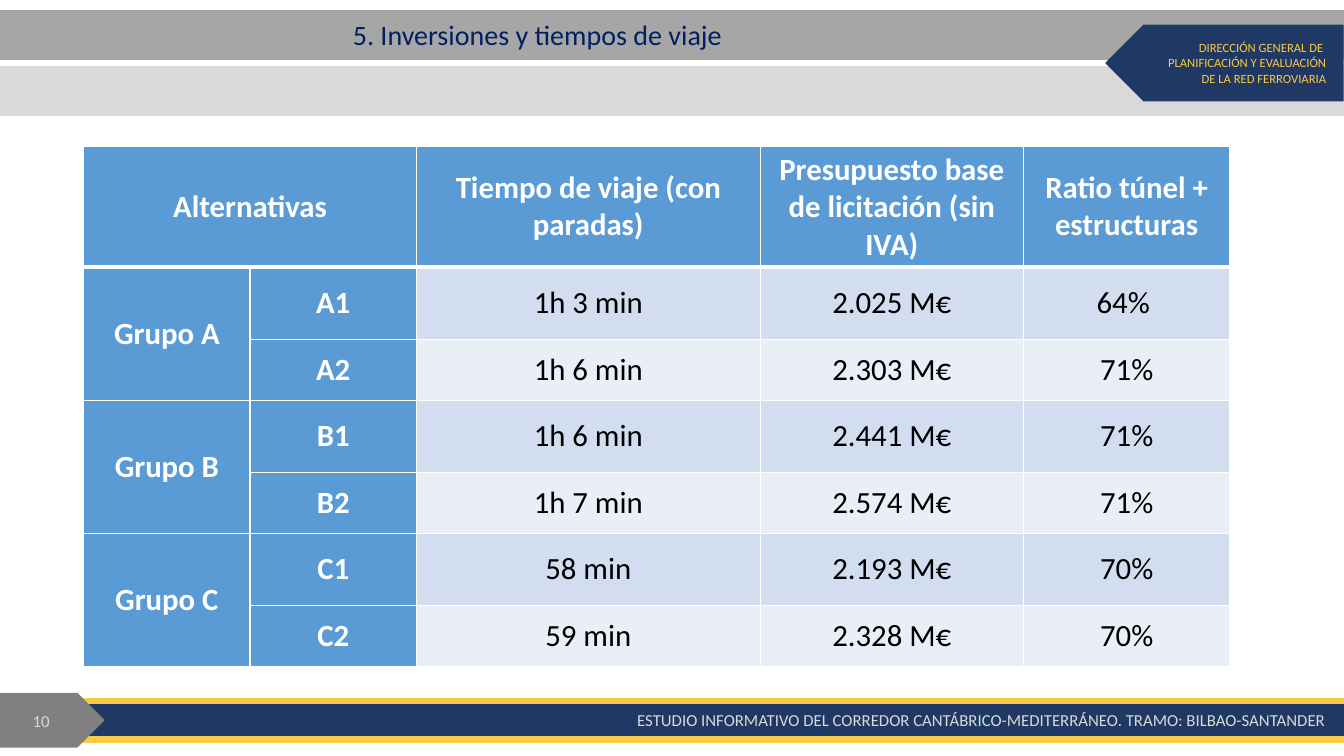
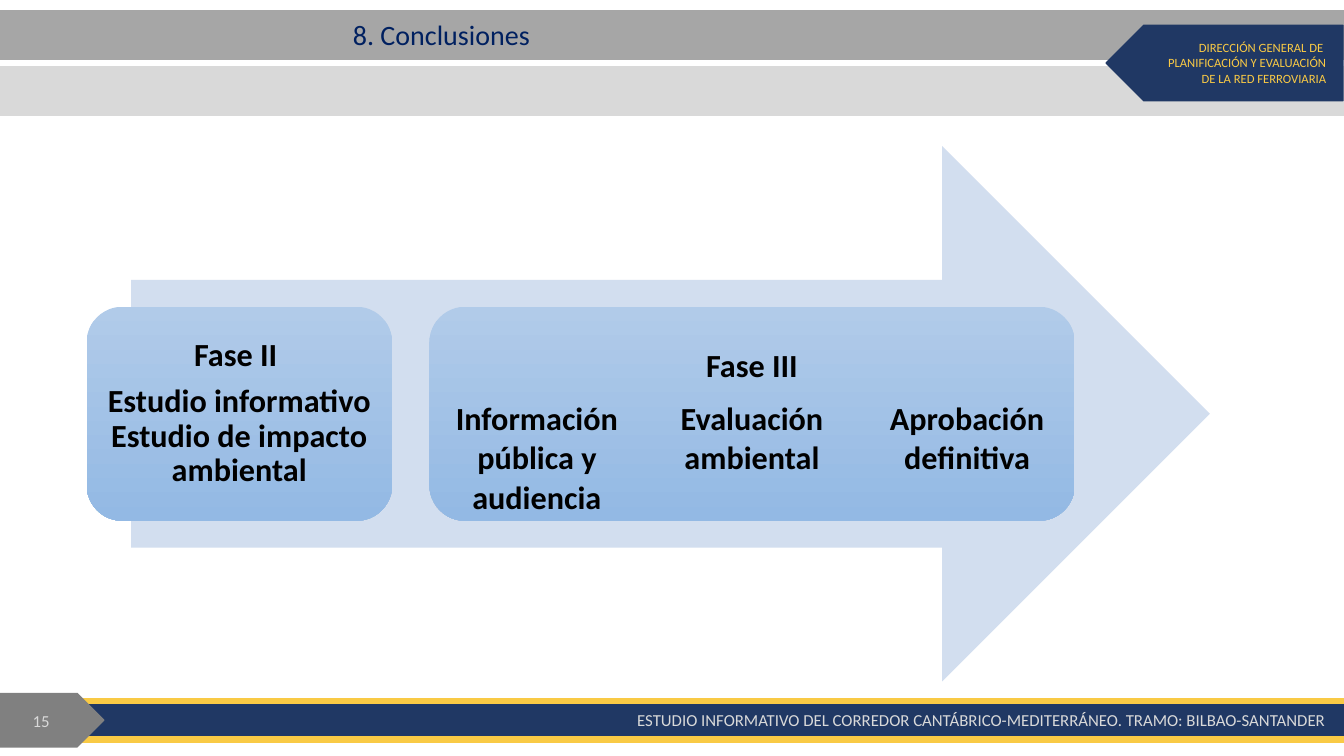
from lxml.etree import SubElement
from pptx import Presentation
from pptx.dml.color import RGBColor
from pptx.enum.shapes import MSO_SHAPE
from pptx.enum.text import MSO_ANCHOR, PP_ALIGN
from pptx.oxml.ns import qn
from pptx.util import Inches, Pt

WIDTH, HEIGHT = 13.33, 7.5
FONT = "Calibri"
NAVY, GOLD, GREY, PALE_GREY = "203864", "F9CA45", "808080", "D9D9D9"
BLUE, ICE, FROST = "5B9BD5", "D2DEEF", "EAEFF7"
TITLE_BLUE, BLACK, WHITE = "002060", "000000", "FFFFFF"
PLAIN_TABLE = "{2D5ABB26-0587-4C30-8999-92F81FD0307C}"
BODY = (0.83, 1.45, 11.37, 5.31)

OFFICE = ["DIRECCIÓN GENERAL DE ", "PLANIFICACIÓN Y EVALUACIÓN DE LA RED FERROVIARIA"]
FOOTER = "ESTUDIO INFORMATIVO DEL CORREDOR CANTÁBRICO-MEDITERRÁNEO. TRAMO: BILBAO-SANTANDER"
HEADINGS = ["Alternativas", "", "Tiempo de viaje (con paradas)",
            "Presupuesto base de licitación (sin IVA)", "Ratio túnel + estructuras"]
ALTERNATIVES = [
    ["Grupo A", "A1", "1h 3 min", "2.025 M€", "64% "],
    ["", "A2", "1h 6 min", "2.303 M€", "71%"],
    ["Grupo B", "B1", "1h 6 min", "2.441 M€", "71%"],
    ["", "B2", "1h 7 min", "2.574 M€", "71%"],
    ["Grupo C", "C1", "58 min", "2.193 M€", "70%"],
    ["", "C2", "59 min", "2.328 M€", "70%"],
]
STEPS = ["Información pública y audiencia", "Evaluación ambiental", "Aprobación definitiva"]


def color(code):
    return RGBColor.from_string(code)


def inches(box):
    return [Inches(length) for length in box]


def write(frame, lines, size, code, align, bold=False, spacing=None, after=None):
    frame.text = "\n".join(lines)
    frame.word_wrap = True
    for para in frame.paragraphs:
        para.alignment = align
        para.line_spacing = spacing
        para.space_after = after
        for span in para.runs:
            span.font.name = FONT
            span.font.size = Pt(size)
            span.font.bold = bold
            span.font.color.rgb = color(code)


def add_panel(page, kind, box, fill=None, outlined=False):
    panel = page.shapes.add_shape(kind, *inches(box))
    panel.shadow.inherit = False
    if fill:
        panel.fill.solid()
        panel.fill.fore_color.rgb = color(fill)
    if outlined:
        panel.line.color.rgb = color(fill)
        panel.line.width = Pt(1)
    else:
        panel.line.fill.background()
    return panel


def add_label(page, box, lines, size, code, anchor=MSO_ANCHOR.TOP):
    label = page.shapes.add_textbox(*inches(box))
    write(label.text_frame, lines, size, code, PP_ALIGN.RIGHT)
    label.text_frame.vertical_anchor = anchor


def add_header(page, title):
    for top, fill in ((0.11, "A6A6A6"), (0.66, PALE_GREY)):
        add_panel(page, MSO_SHAPE.RECTANGLE, (0, top, WIDTH, 0.48), fill, True)
    tag = add_panel(page, MSO_SHAPE.PENTAGON, (10.97, 0.25, 2.35, 0.75), NAVY, True)
    tag._element.spPr.get_or_add_xfrm().set("flipH", "1")
    add_label(page, (11.41, 0.35, 1.84, 0.56), OFFICE, 9, GOLD)

    heading = page.shapes.title
    heading.left, heading.top, heading.width, heading.height = inches((3.4, 0.18, 7.26, 0.37))
    write(heading.text_frame, [title], 20, TITLE_BLUE, PP_ALIGN.LEFT, spacing=0.9)
    heading.text_frame.vertical_anchor = MSO_ANCHOR.MIDDLE
    page.shapes._spTree.append(heading._element)


def add_footer(page, number):
    for top, height, fill in ((6.99, 0.31, NAVY), (7.31, 0.05, GOLD), (6.93, 0.05, GOLD)):
        add_panel(page, MSO_SHAPE.RECTANGLE, (0, top, WIDTH, height), fill, True)
    add_panel(page, MSO_SHAPE.PENTAGON, (-0.01, 6.88, 1.04, 0.53), GREY, True)
    add_label(page, (0, 6.95, 0.59, 0.4), [number], 12, PALE_GREY, MSO_ANCHOR.MIDDLE)
    add_label(page, (1.34, 6.99, 11.91, 0.3), [FOOTER], 12, PALE_GREY)


def add_page(deck, title, number):
    page = deck.slides.add_slide(deck.slide_layouts[5])
    add_header(page, title)
    add_footer(page, number)
    return page


def add_grid(page, box, columns, rows):
    left, top = box[:2]
    frame = page.shapes.add_table(len(rows), len(columns),
                                  *inches((left, top, sum(columns), sum(rows))))
    table = frame.table
    table.first_row = table.horz_banding = False
    table._tbl.tblPr.find(qn("a:tableStyleId")).text = PLAIN_TABLE
    for column, width in zip(table.columns, columns):
        column.width = Inches(width)
    for row, height in zip(table.rows, rows):
        row.height = Inches(height)
    return table


def draw_borders(cell, top, bottom):
    properties = cell._tc.get_or_add_tcPr()
    for side, points in (("L", 1), ("R", 1), ("T", top), ("B", bottom)):
        line = SubElement(properties, qn(f"a:ln{side}"), w=str(Pt(points)))
        fill = SubElement(line, qn("a:solidFill"))
        SubElement(fill, qn("a:srgbClr"), val=WHITE)


def add_alternatives(page, box):
    columns = [1.65, 1.65, 3.41, 2.61, 2.05]
    table = add_grid(page, box, columns, [1.18] + [0.72, 0.6] * 3)
    for row, values in enumerate([HEADINGS] + ALTERNATIVES):
        for column, value in enumerate(values):
            cell = table.cell(row, column)
            is_label = row == 0 or column < 2
            write(cell.text_frame, [value], 22, WHITE if is_label else BLACK,
                  PP_ALIGN.CENTER, is_label)
            cell.vertical_anchor = MSO_ANCHOR.MIDDLE
            draw_borders(cell, 3 if row == 1 else 1, 3 if row == 0 else 1)
            cell.fill.solid()
            band = ICE if row % 2 else FROST
            cell.fill.fore_color.rgb = color(BLUE if is_label else band)
    table.cell(0, 0).merge(table.cell(0, 1))
    for row in (1, 3, 5):
        table.cell(row, 0).merge(table.cell(row + 1, 0))


def add_phase(page, box, lines, anchor, top_inset):
    phase = add_panel(page, MSO_SHAPE.ROUNDED_RECTANGLE, box)
    phase.fill.gradient()
    phase.fill.gradient_angle = 270
    for stop, code in zip(phase.fill.gradient_stops, ("B1CBE9", "93B9E4")):
        stop.color.rgb = color(code)
    frame = phase.text_frame
    write(frame, lines, 23, BLACK, PP_ALIGN.CENTER, True, 0.9, Pt(8))
    frame.vertical_anchor = anchor
    frame.margin_left = frame.margin_right = frame.margin_bottom = Inches(0.1)
    frame.margin_top = Inches(top_inset)


def add_steps(page, box):
    left, top, width, height = box
    table = add_grid(page, box, [width / len(STEPS)] * len(STEPS), [height])
    for cell, step in zip(table.rows[0].cells, STEPS):
        write(cell.text_frame, [step], 23, BLACK, PP_ALIGN.CENTER, True)
        cell.fill.background()


def add_process(page, box):
    left, top, width, height = box
    phase_top, phase_height = top + 0.3 * height, 0.4 * height
    add_panel(page, MSO_SHAPE.RIGHT_ARROW, (left + 0.47, top, 10.7, height), ICE)
    add_phase(page, (left + 0.03, phase_top, 3.03, phase_height),
              ["Fase II ", "Estudio informativo Estudio de impacto ambiental"],
              MSO_ANCHOR.MIDDLE, 0.1)
    add_phase(page, (left + 3.43, phase_top, 6.4, phase_height),
              ["Fase III"], MSO_ANCHOR.TOP, 0.32)
    add_steps(page, (left + 3.43, phase_top + 0.87, 6.4, phase_height - 0.87))


def main():
    deck = Presentation()
    deck.slide_width, deck.slide_height = inches((WIDTH, HEIGHT))
    add_alternatives(add_page(deck, "5. Inversiones y tiempos de viaje", "10"), BODY)
    add_process(add_page(deck, "8. Conclusiones", "15"), BODY)
    deck.save("out.pptx")


if __name__ == "__main__":
    main()
